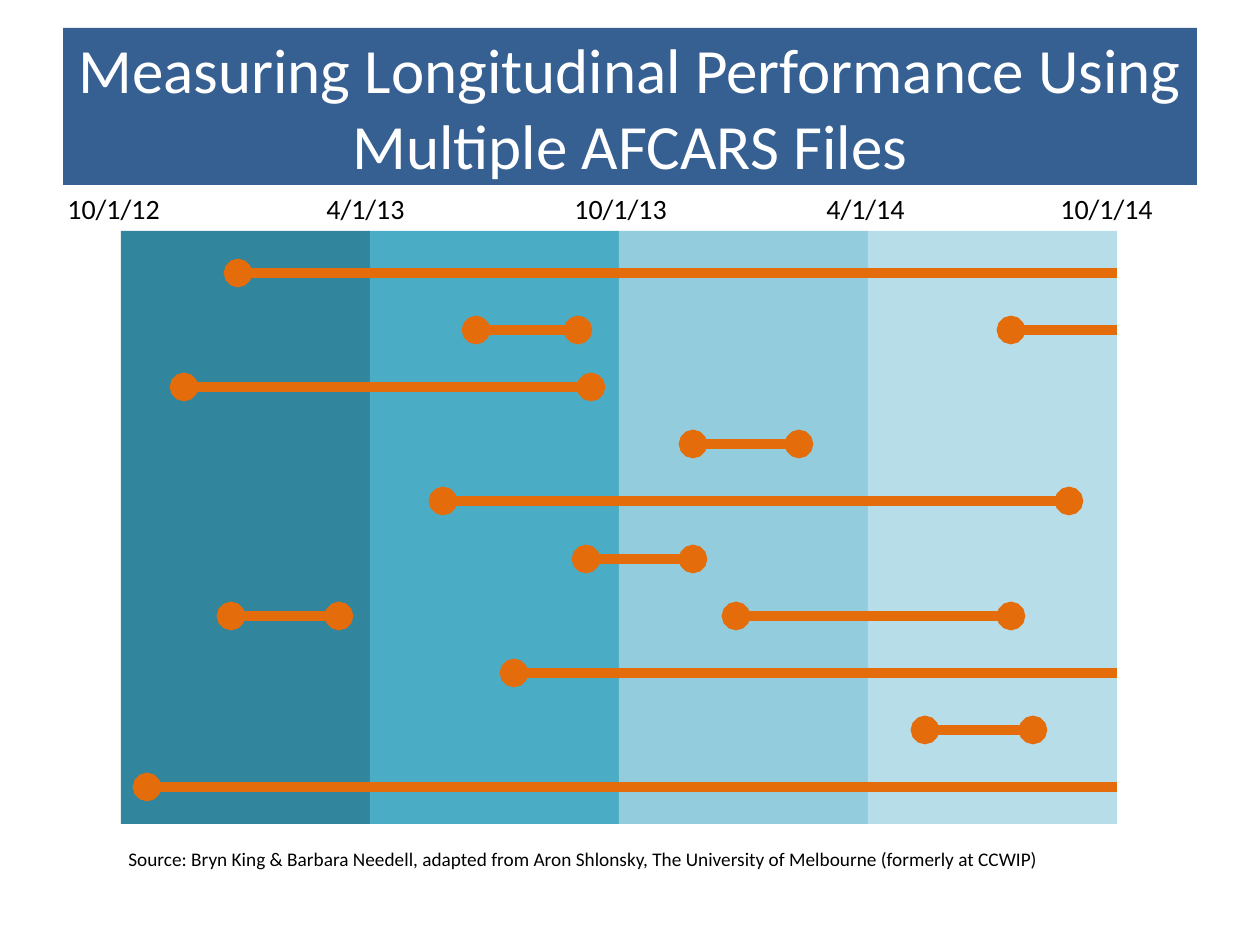
from lxml import etree
from pptx import Presentation
from pptx import util as u
from pptx.dml.color import RGBColor
from pptx.enum import shapes, text
from pptx.oxml.ns import qn

PX = u.Inches(1) / 126
COLORS = {
    "title": "376092",
    "white": "FFFFFF",
    "ink": "000000",
    "episode": "E46C0A",
    "periods": ["31859C", "4BACC6", "93CDDD", "B7DEE8"],
}
LEFT, TOP, PERIOD_W, PERIOD_H = 121, 231, 249, 593
RIGHT = LEFT + 4 * PERIOD_W
FIRST_ROW, LAST_ROW = 273, 787

DATES = [("10/1/12", 55, 118), ("4/1/13", 314, 104), ("10/1/13", 562, 118),
         ("4/1/14", 814, 104), ("10/1/14", 1048, 118)]
# One entry per child: (start, end) of each episode; no end means still open
CHILDREN = [
    [(238, None)],
    [(476, 578), (1011, None)],
    [(184, 591)],
    [(693, 799)],
    [(443, 1069)],
    [(586, 693)],
    [(231, 339), (736, 1011)],
    [(514, None)],
    [(925, 1033)],
    [(147, None)],
]


def emu(*lengths):
    return [u.Emu(round(n * PX)) for n in lengths]


def rgb(color):
    return RGBColor.from_string(color)


class Deck:
    """Holds the style and the current slide."""

    def __init__(self, width, height, font="Calibri"):
        self.prs = Presentation()
        self.prs.slide_width, self.prs.slide_height = emu(width, height)
        self.font = font
        self.s = self.prs.slides.add_slide(self.prs.slide_layouts[5])

    def set_text(self, sp, words, size, color, wrap=True):
        tf = sp.text_frame
        tf.text = words
        tf.word_wrap = wrap
        f = tf.paragraphs[0].runs[0].font
        f.name, f.size = self.font, u.Pt(size)
        f.color.rgb = rgb(color)
        return tf

    def title(self, words, x, y, w, h):
        sp = self.s.shapes.title
        sp.left, sp.top, sp.width, sp.height = emu(x, y, w, h)
        sp.fill.solid()
        sp.fill.fore_color.rgb = rgb(COLORS["title"])
        tf = self.set_text(sp, words, 36, COLORS["white"])
        tf.vertical_anchor = text.MSO_ANCHOR.MIDDLE
        tf.paragraphs[0].alignment = text.PP_ALIGN.CENTER

    def label(self, words, x, y, w, h, size, wrap=False):
        sp = self.s.shapes.add_textbox(*emu(x, y, w, h))
        tf = self.set_text(sp, words, size, COLORS["ink"], wrap)
        tf.auto_size = text.MSO_AUTO_SIZE.SHAPE_TO_FIT_TEXT

    def rect(self, x, y, w, h, color):
        sp = self.s.shapes.add_shape(shapes.MSO_SHAPE.RECTANGLE, *emu(x, y, w, h))
        sp.shadow.inherit = False
        sp.fill.solid()
        sp.fill.fore_color.rgb = rgb(color)
        sp.line.fill.background()

    def episode(self, start, end, y):
        """Draw a bar with a dot at its start, and at its end if it has one."""
        cx = self.s.shapes.add_connector(
            shapes.MSO_CONNECTOR.STRAIGHT, *emu(start, y, end or RIGHT, y))
        cx.line.color.rgb = rgb(COLORS["episode"])
        cx.line.width = u.Pt(5.5)
        spPr = cx._element.spPr
        ln = spPr.find(qn("a:ln"))
        for tag in ["a:headEnd", "a:tailEnd"] if end else ["a:headEnd"]:
            etree.SubElement(ln, qn(tag), type="oval")
        etree.SubElement(spPr, qn("a:effectLst"))


def main():
    deck = Deck(1260, 945)
    for i, color in enumerate(COLORS["periods"]):
        deck.rect(LEFT + i * PERIOD_W, TOP, PERIOD_W, PERIOD_H, color)
    deck.title("Measuring Longitudinal Performance Using Multiple AFCARS Files",
               63, 28, 1134, 157)
    for date, x, w in DATES:
        deck.label(date, x, 185, w, 47, 16)
    deck.label("Source: Bryn King & Barbara Needell, adapted from Aron Shlonsky, "
               "The University of Melbourne (formerly at CCWIP)",
               116, 841, 998, 59, 11, wrap=True)
    pitch = (LAST_ROW - FIRST_ROW) / (len(CHILDREN) - 1)
    for i, episodes in enumerate(CHILDREN):
        for start, end in episodes:
            deck.episode(start, end, round(FIRST_ROW + i * pitch))
    deck.prs.save("out.pptx")


if __name__ == "__main__":
    main()
